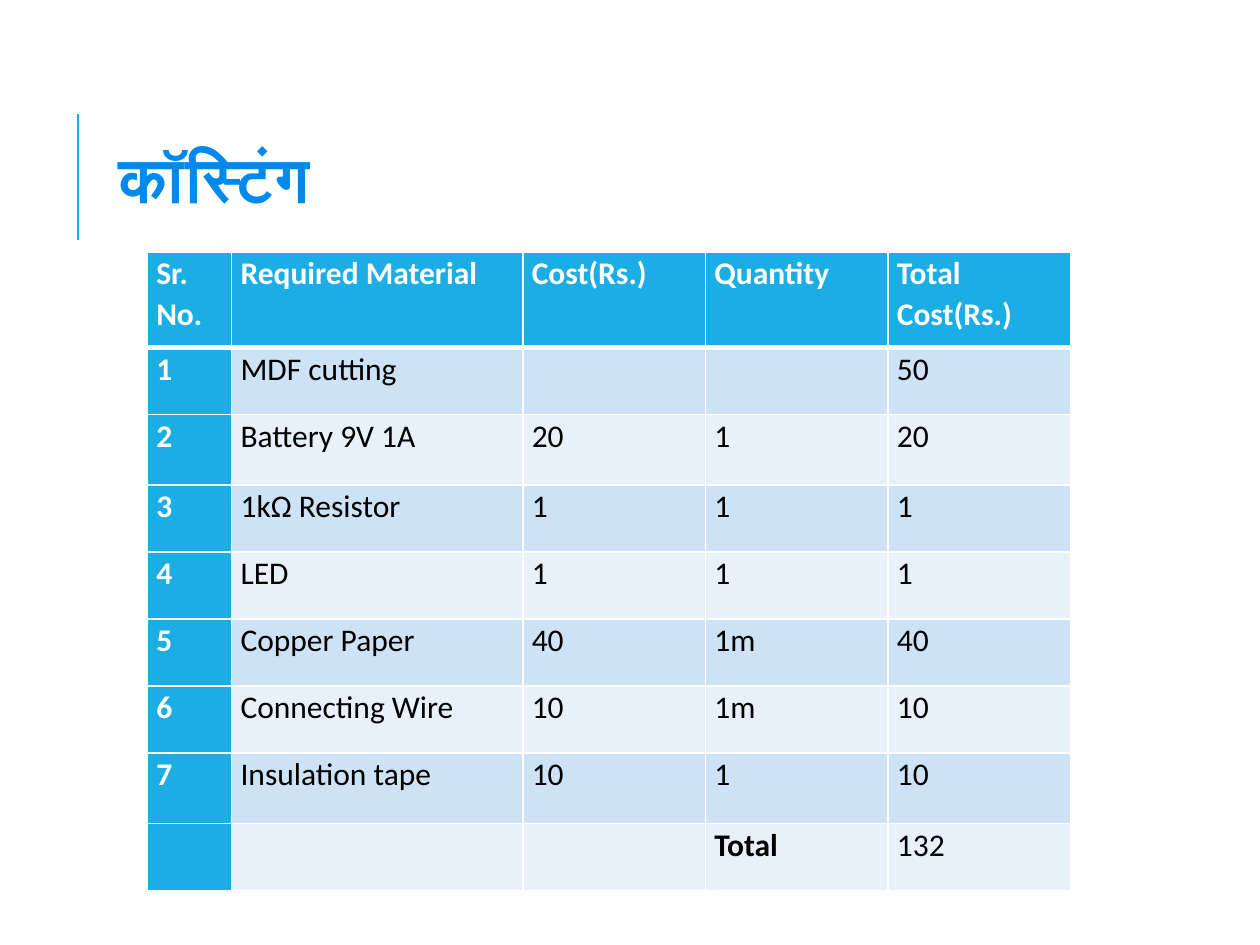
from lxml.etree import SubElement
from pptx import Presentation
from pptx.dml.color import RGBColor as RGB
from pptx.enum.shapes import MSO_CONNECTOR as CONN
from pptx.enum.text import MSO_ANCHOR as ANCHOR
from pptx.oxml.ns import qn
from pptx.util import Cm, Pt

COLORS = {
    "accent": "1CADE4",
    "title_top": "0089EC",
    "title_bottom": "0061A7",
    "band_dark": "CDE3F5",
    "band_light": "E8F1FA",
    "white": "FFFFFF",
    "black": "000000",
}
COSTS = [
    ["Sr. No.", "Required Material", "Cost(Rs.)", "Quantity", "Total Cost(Rs.)"],
    ["1", "MDF cutting", "", "", "50"],
    ["2", "Battery 9V 1A", "20", "1", "20"],
    ["3", "1kΩ Resistor", "1", "1", "1"],
    ["4", "LED", "1", "1", "1"],
    ["5", "Copper Paper", "40", "1m", "40"],
    ["6", "Connecting Wire", "10", "1m", "10"],
    ["7", "Insulation tape", "10", "1", "10"],
    ["", "", "", "Total", "132"],
]
COL_WIDTHS = [1.7, 5.87, 3.68, 3.68, 3.68]
ROW_HEIGHTS = [1.93, 1.35, 1.42, 1.35, 1.35, 1.35, 1.35, 1.42, 1.35]


def rgb(name):
    return RGB.from_string(COLORS[name])


def add_title(slide, text, left, top, width, height):
    """Place the heading and the accent rule to its left."""
    rule_x, rule_top = left - 0.56, top + 0.66
    rule = slide.shapes.add_connector(
        CONN.STRAIGHT, Cm(rule_x), Cm(rule_top + 2.54), Cm(rule_x), Cm(rule_top))
    rule.line.color.rgb = rgb("accent")
    rule.line.width = Pt(1.5)
    SubElement(rule._element.spPr, qn("a:effectLst"))

    tf = slide.shapes.add_textbox(Cm(left), Cm(top), Cm(width), Cm(height)).text_frame
    tf.word_wrap = True
    tf.vertical_anchor = ANCHOR.MIDDLE
    p = tf.paragraphs[0]
    p.line_spacing = 0.8
    r = p.add_run()
    r.text = text
    r.font.name = "Montserrat"
    r.font.size = Pt(36)
    r.font.bold = True
    r._r.get_or_add_rPr().set("spc", "50")
    fill = r.font.fill
    fill.gradient()
    fill.gradient_angle = 270
    stops = zip(fill.gradient_stops, (0.25, 1), ("title_top", "title_bottom"))
    for stop, position, color in stops:
        stop.position = position
        stop.color.rgb = rgb(color)


def set_borders(cell, top, bottom):
    """Draw white borders; top and bottom are widths in points."""
    tcPr = cell._tc.get_or_add_tcPr()
    for side, width in (("L", 1), ("R", 1), ("T", top), ("B", bottom)):
        ln = SubElement(tcPr, qn(f"a:ln{side}"), w=str(Pt(width)))
        fill = SubElement(ln, qn("a:solidFill"))
        SubElement(fill, qn("a:srgbClr"), val=COLORS["white"])


def fill_cell(cell, text, row, col):
    heading = row == 0 or col == 0
    cell.margin_left = cell.margin_right = Cm(0.18)
    cell.margin_top = cell.margin_bottom = 0
    set_borders(cell, 3 if row == 1 else 1, 3 if row == 0 else 1)
    cell.fill.solid()
    band = "band_dark" if row % 2 else "band_light"
    cell.fill.fore_color.rgb = rgb("accent" if heading else band)
    if not text:
        return
    p = cell.text_frame.paragraphs[0]
    p.line_spacing = 1.07
    r = p.add_run()
    r.text = text
    r.font.name = "Calibri"
    r.font.size = Pt(18)
    r.font.bold = heading or text == "Total"
    r.font.color.rgb = rgb("white" if heading else "black")


def add_cost_table(slide, left, top):
    table = slide.shapes.add_table(
        len(ROW_HEIGHTS), len(COL_WIDTHS), Cm(left), Cm(top),
        Cm(sum(COL_WIDTHS)), Cm(sum(ROW_HEIGHTS))).table
    table.first_col = True
    for column, width in zip(table.columns, COL_WIDTHS):
        column.width = Cm(width)
    for row, height in zip(table.rows, ROW_HEIGHTS):
        row.height = Cm(height)
    for i, texts in enumerate(COSTS):
        for j, text in enumerate(texts):
            fill_cell(table.cell(i, j), text, i, j)


def main():
    prs = Presentation()
    prs.slide_width, prs.slide_height = Cm(25.4), Cm(19.05)
    slide = prs.slides.add_slide(prs.slide_layouts[6])
    add_title(slide, "कॉस्टिंग", 2.13, 1.63, 20.24, 4.17)
    add_cost_table(slide, 2.97, 5.08)
    prs.save("out.pptx")


if __name__ == "__main__":
    main()
